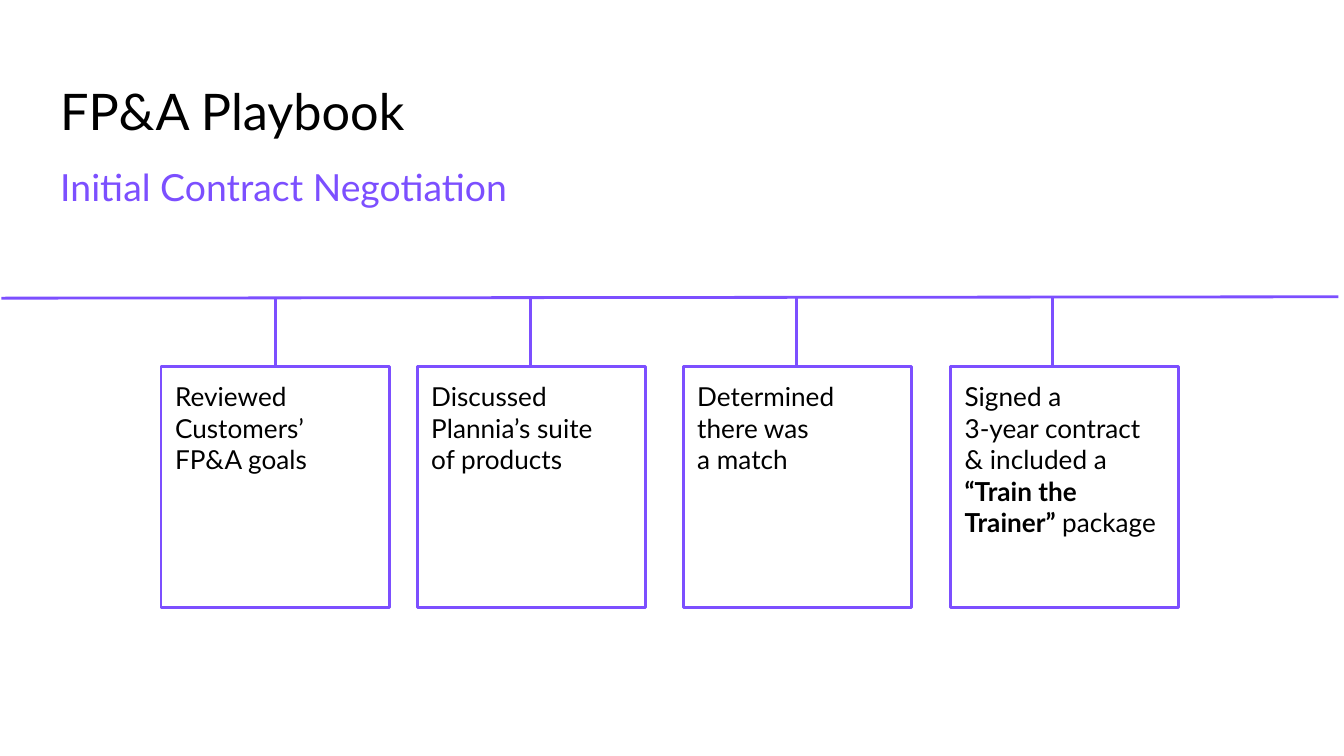
from lxml import etree
from pptx import Presentation
from pptx.dml.color import RGBColor
from pptx.enum.shapes import MSO_CONNECTOR, MSO_SHAPE
from pptx.enum.text import MSO_ANCHOR, PP_ALIGN
from pptx.oxml.ns import qn
from pptx.util import Pt

PX = 9525  # EMU per px, 96 px to the inch
RECT = MSO_SHAPE.RECTANGLE
STRAIGHT = MSO_CONNECTOR.STRAIGHT
TOP = MSO_ANCHOR.TOP
LEFT = PP_ALIGN.LEFT

COLORS = {"text": "000000", "accent": "7C4FFF"}
FONT = "Lato"
INSET = 10
LINE_WIDTH = 1.5

# Left edge, distance from there to the stem, and runs of (text, bold)
STEPS = [
    (115, 82, [("Reviewed Customers’\nFP&A goals", False)]),
    (298, 81, [("Discussed\nPlannia’s suite\nof products", False)]),
    (488, 81, [("Determined\nthere was\na match", False)]),
    (679, 73, [("Signed a\n3-year contract\n& included a\n", False),
               ("“Train the Trainer” ", True), ("package", False)]),
]


def rgb(name):
    return RGBColor.from_string(COLORS[name])


def write(sp, runs, size, color):
    tf = sp.text_frame
    tf.word_wrap = True
    tf.vertical_anchor = TOP
    tf.margin_left = tf.margin_right = INSET * PX
    tf.margin_top = tf.margin_bottom = INSET * PX
    p = tf.paragraphs[0]
    p.alignment = LEFT
    p.font.name = FONT
    p.font.size = Pt(size)
    p.font.color.rgb = rgb(color)
    for text, bold in runs:
        for i, line in enumerate(text.split("\n")):
            if i:
                p.add_line_break()
            if line:
                r = p.add_run()
                r.text = line
                if bold:
                    r.font.bold = True


def add_line(s, x1, y1, x2, y2):
    line = s.shapes.add_connector(STRAIGHT, x1 * PX, y1 * PX, x2 * PX, y2 * PX)
    line.line.color.rgb = rgb("accent")
    line.line.width = Pt(LINE_WIDTH)
    etree.SubElement(line._element.spPr, qn("a:effectLst"))


def add_heading(s, x, y, w, h, text, size, color):
    sp = s.shapes.add_textbox(x * PX, y * PX, w * PX, h * PX)
    write(sp, [(text, False)], size, color)


def add_step(s, x, y, w, h, stem_x, stem_h, runs):
    # Card
    sp = s.shapes.add_shape(RECT, x * PX, y * PX, w * PX, h * PX)
    sp.shadow.inherit = False
    sp.fill.background()
    sp.line.color.rgb = rgb("accent")
    sp.line.width = Pt(LINE_WIDTH)
    write(sp, runs, 14, "text")
    # Stem up to the timeline
    add_line(s, x + stem_x, y, x + stem_x, y - stem_h)


def add_timeline(s, x, y, w):
    add_line(s, x, y + 1, x + w, y)
    for left, stem_x, runs in STEPS:
        add_step(s, left, y + 50, 163, 172, stem_x, 50, runs)


def main():
    prs = Presentation()
    prs.slide_width = 960 * PX
    prs.slide_height = 540 * PX
    s = prs.slides.add_slide(prs.slide_layouts[6])

    # Title and subtitle
    add_heading(s, 33, 47, 895, 60, "FP&A Playbook", 27, "text")
    add_heading(s, 33, 107, 840, 60, "Initial Contract Negotiation", 20, "accent")
    # Timeline with its steps
    add_timeline(s, 1, 212, 955)

    prs.save("out.pptx")


if __name__ == "__main__":
    main()
